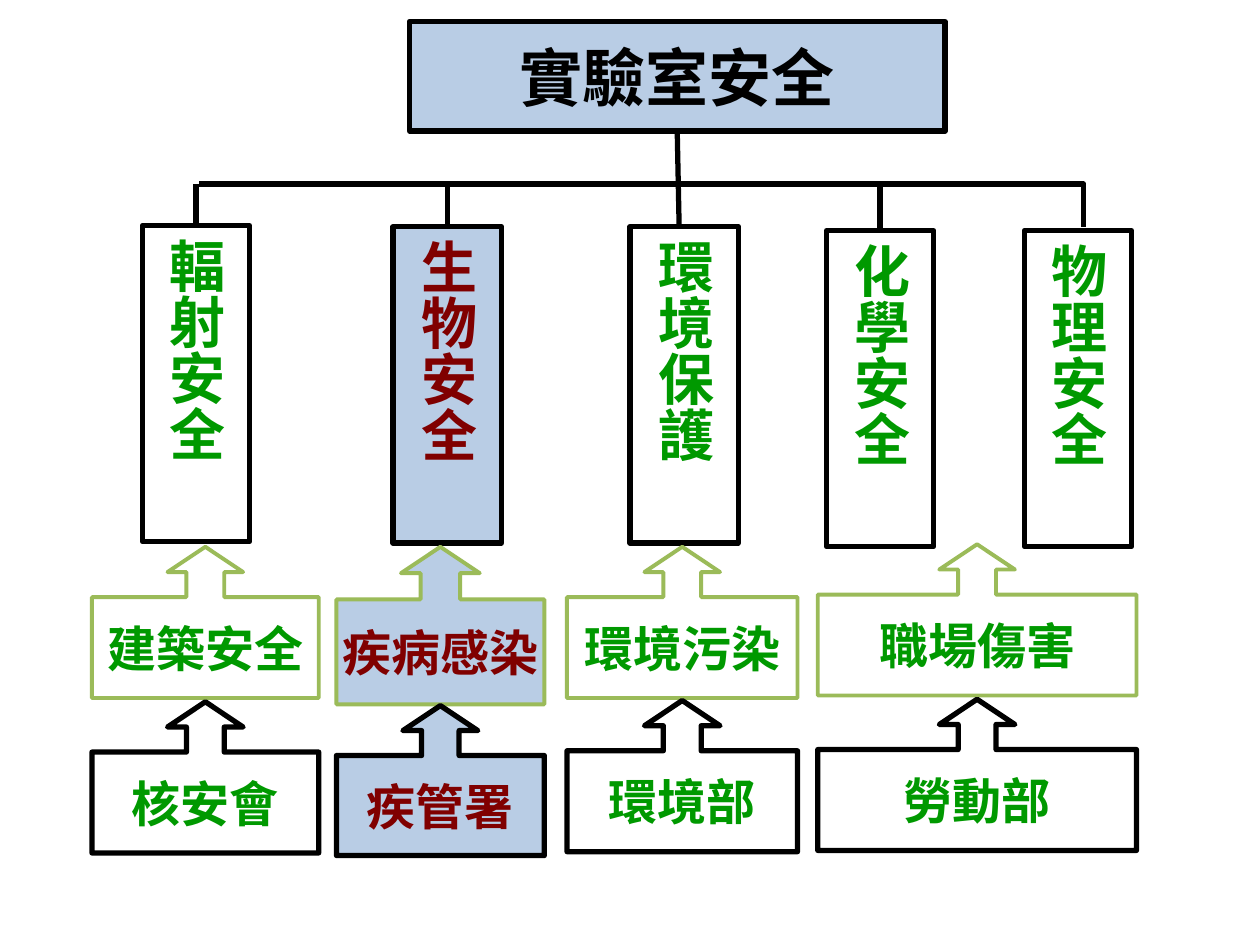
from pptx import Presentation
from pptx.dml.color import RGBColor
from pptx.enum.shapes import MSO_CONNECTOR as Link, MSO_SHAPE as Shape
from pptx.enum.text import MSO_ANCHOR as Anchor, MSO_AUTO_SIZE as AutoSize, PP_ALIGN as Align
from pptx.oxml.ns import qn
from pptx.util import Inches, Pt

FONT = "Noto Sans CJK SC"
BLACK, WHITE, BLUE = "000000", "FFFFFF", "B9CDE5"
GREEN, RED, OLIVE = "009900", "800000", "9BBB59"
BUS_Y = 1.46
CALLOUT_ADJUSTMENTS = (0.25, 0.25, 0.167, 0.667)

# Label, left, top, width, fill, text colour
FIELDS = [
    ("輻射安全", 1.13, 1.79, 0.85, None, GREEN),
    ("生物安全", 3.12, 1.8, 0.86, BLUE, RED),
    ("環境保護", 5, 1.8, 0.86, None, GREEN),
    ("化學安全", 6.56, 1.83, 0.85, None, GREEN),
    ("物理安全", 8.13, 1.83, 0.85, None, GREEN),
]
# Left, width, fill, text colour, then (label, top, height) of hazard and agency
COLUMNS = [
    (0.73, 1.8, WHITE, GREEN, ("建築安全", 4.34, 1.2), ("核安會", 5.57, 1.2)),
    (2.67, 1.65, BLUE, RED, ("疾病感染", 4.34, 1.25), ("疾管署", 5.6, 1.19)),
    (4.5, 1.83, WHITE, GREEN, ("環境污染", 4.34, 1.2), ("環境部", 5.56, 1.2)),
    (6.49, 2.53, WHITE, GREEN, ("職場傷害", 4.32, 1.2), ("勞動部", 5.55, 1.2)),
]


def color(value):
    return RGBColor.from_string(value)


def paint(box, fill, line, width):
    if fill:
        box.fill.solid()
        box.fill.fore_color.rgb = color(fill)
    else:
        box.fill.background()
    box.line.color.rgb = color(line)
    box.line.width = Pt(width)


def write(box, label, size, text_color):
    frame = box.text_frame
    frame.word_wrap = False
    frame.auto_size = AutoSize.NONE
    frame.vertical_anchor = Anchor.MIDDLE
    para = frame.paragraphs[0]
    para.alignment = Align.CENTER
    span = para.add_run()
    span.text = label
    span.font.size = Pt(size)
    span.font.bold = True
    span.font.color.rgb = color(text_color)
    span.font.name = FONT
    latin = span.font._element.find(qn("a:latin"))
    east_asian = latin.makeelement(qn("a:ea"), {"typeface": FONT})
    latin.addnext(east_asian)


def add_title(slide):
    title = slide.shapes.title
    title.left, title.top = Inches(3.25), Inches(0.17)
    title.width, title.height = Inches(4.25), Inches(0.87)
    paint(title, BLUE, BLACK, 3)
    write(title, "實驗室安全", 36, BLACK)
    return title


def add_field(slide, label, left, top, width, fill, text_color):
    """Add a tall box whose text runs from top to bottom."""
    box = slide.shapes.add_shape(
        Shape.RECTANGLE, Inches(left), Inches(top), Inches(width), Inches(2.51))
    box.shadow.inherit = False
    paint(box, fill, BLACK, 3)
    write(box, label, 32, text_color)
    box.text_frame._txBody.bodyPr.set("vert", "eaVert")
    return box


def add_callout(slide, label, left, top, width, height, fill, text_color, line, line_width):
    box = slide.shapes.add_shape(
        Shape.UP_ARROW_CALLOUT, Inches(left), Inches(top), Inches(width), Inches(height))
    for index, value in enumerate(CALLOUT_ADJUSTMENTS):
        box.adjustments[index] = value
    box.shadow.inherit = False
    paint(box, fill, line, line_width)
    write(box, label, 28, text_color)


def add_line(slide, start, end, kind=Link.STRAIGHT):
    line = slide.shapes.add_connector(kind, *start, *end)
    line.line.color.rgb = color(BLACK)
    line.line.width = Pt(3)
    properties = line._element.spPr
    properties.append(properties.makeelement(qn("a:effectLst"), {}))
    return line


def add_bus(slide):
    """Add the horizontal line that turns down to the last field."""
    bus = add_line(slide, (Inches(1.58), Inches(BUS_Y)), (Inches(8.6), Inches(1.8)), Link.ELBOW)
    bus._element.spPr.find(qn("a:prstGeom")).set("prst", "bentConnector2")


def add_drop(slide, field):
    center = field.left + field.width // 2
    drop = add_line(slide, (center, Inches(BUS_Y)), (center, field.top))
    drop.end_connect(field, 0)


def main():
    deck = Presentation()
    deck.slide_width, deck.slide_height = Inches(10), Inches(7.5)
    slide = deck.slides.add_slide(deck.slide_layouts[5])

    title = add_title(slide)
    add_bus(slide)
    fields = [add_field(slide, *field) for field in FIELDS]
    for index in (0, 1, 3):
        add_drop(slide, fields[index])
    trunk = add_line(slide, (Inches(5.38), Inches(1.04)), (Inches(5.39), Inches(1.79)))
    trunk.begin_connect(title, 2)

    for left, width, fill, text_color, hazard, agency in COLUMNS:
        for (label, top, height), line, line_width in ((hazard, OLIVE, 2.25), (agency, BLACK, 3)):
            add_callout(slide, label, left, top, width, height, fill, text_color, line, line_width)

    deck.save("out.pptx")


if __name__ == "__main__":
    main()
